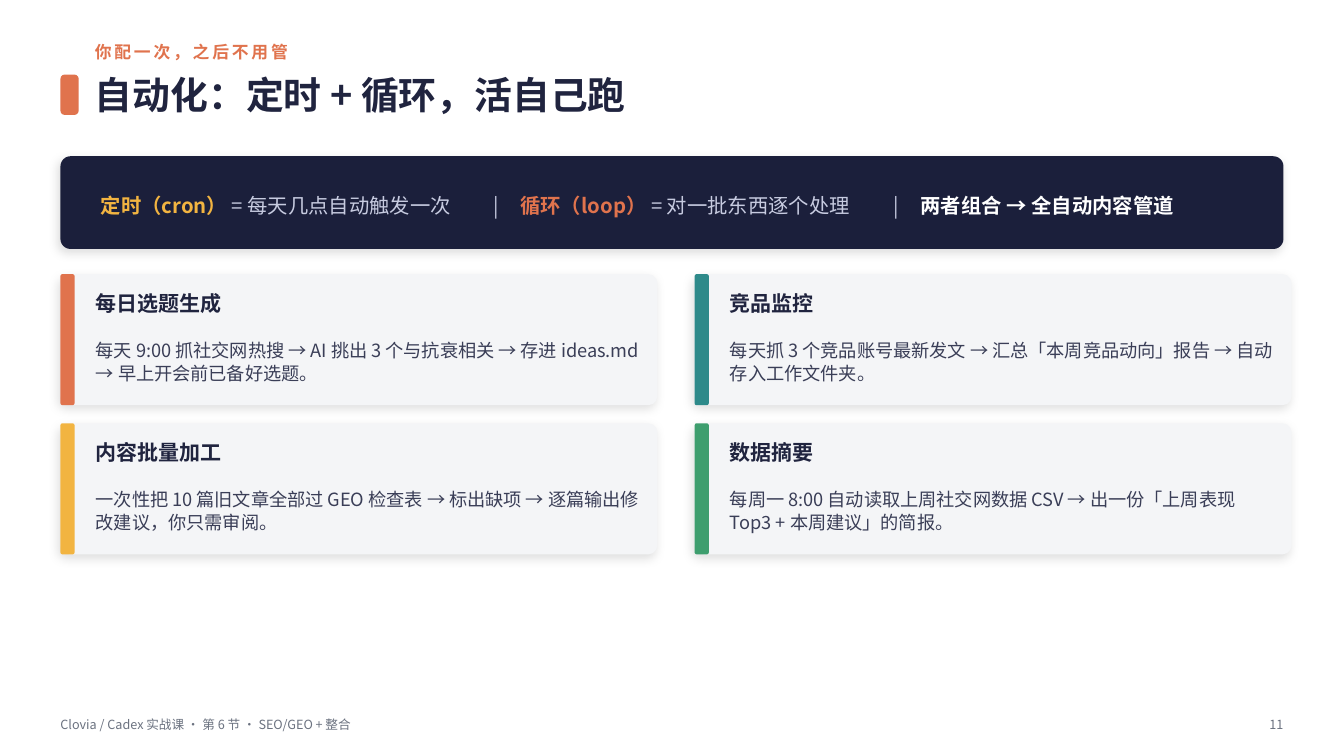
from lxml import etree
from pptx import Presentation
from pptx.dml.color import RGBColor
from pptx.enum.shapes import MSO_SHAPE
from pptx.enum.text import MSO_ANCHOR, MSO_AUTO_SIZE, PP_ALIGN
from pptx.oxml import parse_xml
from pptx.oxml.ns import nsdecls, qn
from pptx.util import Inches, Pt

ROUNDED = MSO_SHAPE.ROUNDED_RECTANGLE
MIDDLE = MSO_ANCHOR.MIDDLE
NO_FIT = MSO_AUTO_SIZE.NONE
LEFT, RIGHT = PP_ALIGN.LEFT, PP_ALIGN.RIGHT
TITLE_ONLY = 5

FONT = "Noto Sans CJK SC"
CORAL, GOLD, TEAL, GREEN = "E0734D", "F2B441", "2E8A8A", "3E9E6E"
INK, NAVY, BODY, MUTED = "20243F", "1B1F3B", "3A3E57", "6B7280"
PANEL, PALE, WHITE = "F4F5F7", "C7CBE0", "FFFFFF"

MARGIN = 0.6
CARD_TOP, CARD_WIDTH, CARD_HEIGHT = 2.72, 5.92, 1.3
COLUMN_STEP, ROW_STEP = 6.29, 1.48
FORMULA_TABS = (3.89, 4.16, 7.86, 8.13)

FORMULA = [
    ("定时（cron）", GOLD, True),
    (" = 每天几点自动触发一次\t|\t", PALE, False),
    ("循环（loop）", CORAL, True),
    (" = 对一批东西逐个处理\t|\t", PALE, False),
    ("两者组合 → 全自动内容管道", WHITE, True),
]
CARDS = [
    ("每日选题生成", CORAL,
     "每天 9:00 抓社交网热搜 → AI 挑出 3 个与抗衰相关 → 存进 ideas.md → 早上开会前已备好选题。"),
    ("竞品监控", TEAL,
     "每天抓 3 个竞品账号最新发文 → 汇总「本周竞品动向」报告 → 自动存入工作文件夹。"),
    ("内容批量加工", GOLD,
     "一次性把 10 篇旧文章全部过 GEO 检查表 → 标出缺项 → 逐篇输出修改建议，你只需审阅。"),
    ("数据摘要", GREEN,
     "每周一 8:00 自动读取上周社交网数据 CSV → 出一份「上周表现 Top3 + 本周建议」的简报。"),
]


def rgb(color):
    return RGBColor.from_string(color)


def apply_format(target, values):
    for name, value in values.items():
        setattr(target, name, value)


def add_run(paragraph, text, size, color, bold=False, spacing=0):
    run = paragraph.add_run()
    run.text = text
    apply_format(run.font, {"name": FONT, "size": Pt(size), "bold": bold})
    run.font.color.rgb = rgb(color)
    properties = run.font._element
    etree.SubElement(properties, qn("a:ea")).set("typeface", FONT)
    if spacing:
        properties.set("spc", str(spacing * 100))


def format_frame(frame, align=LEFT, line_spacing=None):
    apply_format(frame, {
        "margin_left": 0, "margin_top": 0, "margin_right": 0, "margin_bottom": 0,
        "word_wrap": True, "auto_size": NO_FIT, "vertical_anchor": MIDDLE,
    })
    paragraph = frame.paragraphs[0]
    apply_format(paragraph, {"alignment": align, "line_spacing": line_spacing})
    return paragraph


def add_label(slide, box, text, size, color, bold=False, spacing=0,
              align=LEFT, line_spacing=None):
    label = slide.shapes.add_textbox(*map(Inches, box))
    paragraph = format_frame(label.text_frame, align, line_spacing)
    add_run(paragraph, text, size, color, bold, spacing)


def add_block(slide, box, color, corner, raised=False):
    block = slide.shapes.add_shape(ROUNDED, *map(Inches, box))
    block.adjustments[0] = corner
    block.fill.solid()
    block.fill.fore_color.rgb = rgb(color)
    block.line.fill.background()
    block.shadow.inherit = False
    if raised:
        effects = block._element.spPr.find(qn("a:effectLst"))
        effects.append(parse_xml(
            f'<a:outerShdw {nsdecls("a")} blurRad="{Pt(7)}" dist="{Pt(3)}" '
            'dir="8100000" algn="tl" rotWithShape="0">'
            '<a:srgbClr val="000000"><a:alpha val="12000"/></a:srgbClr>'
            '</a:outerShdw>'))


def add_heading(slide):
    add_label(slide, (0.94, 0.36, 11.79, 0.3), "你配一次，之后不用管",
              12, CORAL, bold=True, spacing=2)
    add_block(slide, (MARGIN, 0.74, 0.18, 0.4), CORAL, 0.222)
    title = slide.shapes.title
    apply_format(title, {
        "left": Inches(0.94), "top": Inches(0.64),
        "width": Inches(11.79), "height": Inches(0.6),
    })
    add_run(format_frame(title.text_frame), "自动化：定时 + 循环，活自己跑",
            27, INK, bold=True)


def add_formula(slide):
    add_block(slide, (MARGIN, 1.55, 12.13, 0.92), NAVY, 0.109, raised=True)
    formula = slide.shapes.add_textbox(*map(Inches, (1, 1.68, 11.33, 0.67)))
    paragraph = format_frame(formula.text_frame, line_spacing=1.15)
    tabs = etree.SubElement(paragraph._p.get_or_add_pPr(), qn("a:tabLst"))
    for position in FORMULA_TABS:
        tab = etree.SubElement(tabs, qn("a:tab"))
        tab.set("pos", str(Inches(position)))
        tab.set("algn", "l")
    for text, color, bold in FORMULA:
        add_run(paragraph, text, 14.5, color, bold)


def add_card(slide, left, top, heading, accent, description):
    add_block(slide, (left, top, CARD_WIDTH, CARD_HEIGHT), PANEL, 0.069, raised=True)
    add_block(slide, (left, top, 0.14, CARD_HEIGHT), accent, 0.143)
    add_label(slide, (left + 0.35, top + 0.1, 5.42, 0.38), heading, 15, INK, bold=True)
    add_label(slide, (left + 0.35, top + 0.52, 5.42, 0.68), description, 13, BODY,
              line_spacing=1.05)


def add_footer(slide):
    add_label(slide, (MARGIN, 7.04, 9, 0.3),
              "Clovia / Cadex 实战课 · 第 6 节 · SEO/GEO + 整合", 9, MUTED)
    add_label(slide, (12.03, 7.04, 0.7, 0.3), "11", 9, MUTED, align=RIGHT)


def main():
    deck = Presentation()
    apply_format(deck, {"slide_width": Inches(13.33), "slide_height": Inches(7.5)})
    slide = deck.slides.add_slide(deck.slide_layouts[TITLE_ONLY])
    slide.background.fill.solid()
    slide.background.fill.fore_color.rgb = rgb(WHITE)
    add_heading(slide)
    add_formula(slide)
    for index, card in enumerate(CARDS):
        row, column = divmod(index, 2)
        add_card(slide, MARGIN + column * COLUMN_STEP, CARD_TOP + row * ROW_STEP, *card)
    add_footer(slide)
    deck.save("out.pptx")


if __name__ == "__main__":
    main()
